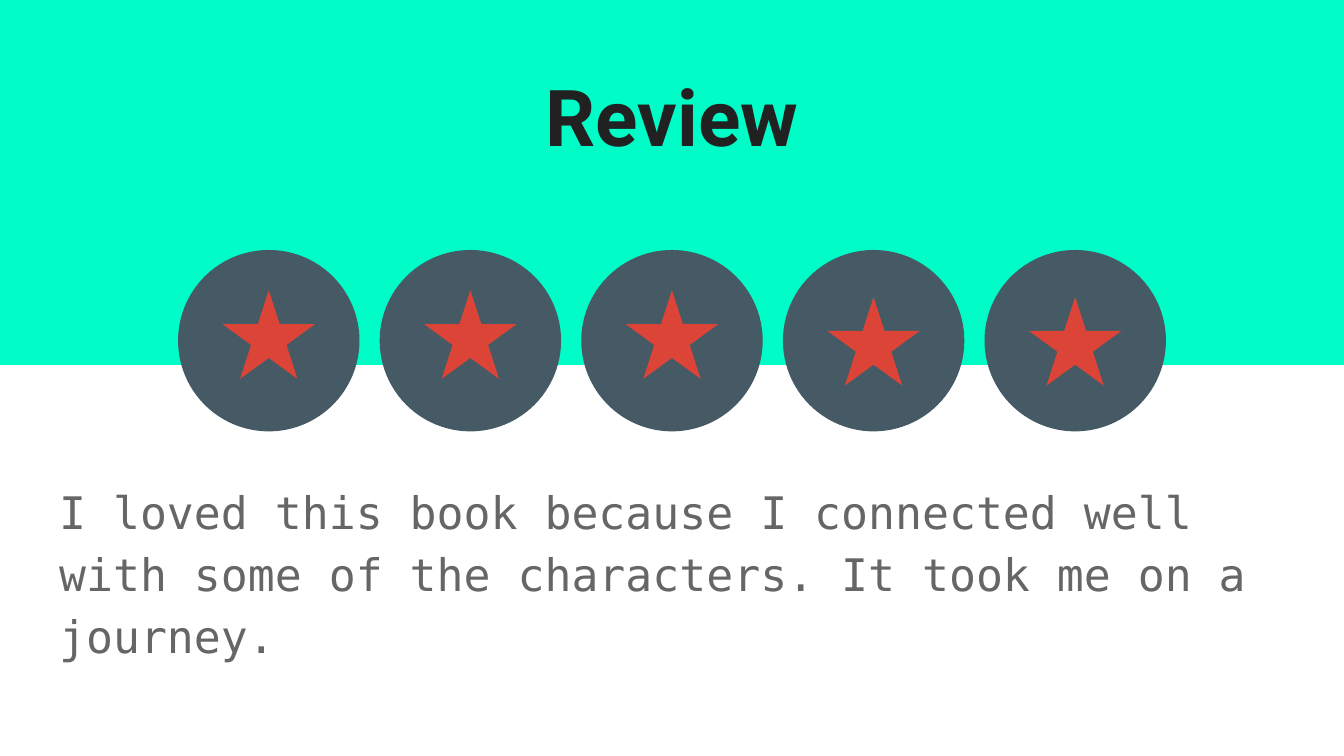
import pptx
import pptx.dml.color
import pptx.enum.shapes
import pptx.enum.text
import pptx.util
from lxml import etree

# Content
TITLE = "Review"
REVIEW = ("I loved this book because I connected well with some of the characters. "
          "It took me on a journey.")
STAR_TOPS = [155.5, 155.5, 155.5, 159.1, 159.1]  # one per rating badge

THEME = {
    "band": "00FDC8", "badge": "455A64", "star": "DB4437",
    "title": {"font": "Roboto", "size": 42, "color": "212121", "bold": True},
    "body": {"font": "DejaVu Sans Mono", "size": 24, "color": "666666", "bold": False},
}

# Layout in points
SLIDE_W, SLIDE_H = 720, 405
BAND_W, BAND_H = 721.4, 195.6
TEXT_LEFT, TEXT_W, TEXT_INSET = 24.5, 671, 7.2
BADGE_SIZE, BADGE_TOP, BADGE_STEP = 97.2, 133.9, 108
STAR_W, STAR_H = 49.7, 47.5

Pt = pptx.util.Pt
SHAPE = pptx.enum.shapes.MSO_SHAPE
ALIGN = pptx.enum.text.PP_ALIGN


def rgb(value):
    return pptx.dml.color.RGBColor.from_string(value)


def add_filled(shapes, preset, left, top, width, height, color):
    shape = shapes.add_shape(preset, Pt(left), Pt(top), Pt(width), Pt(height))
    shape.shadow.inherit = False
    shape.fill.solid()
    shape.fill.fore_color.rgb = rgb(color)
    shape.line.fill.background()
    return shape


def fill_placeholder(holder, top, height, text, style, align):
    holder.left, holder.top = Pt(TEXT_LEFT), Pt(top)
    holder.width, holder.height = Pt(TEXT_W), Pt(height)
    frame = holder.text_frame
    frame.word_wrap = True
    frame.auto_size = pptx.enum.text.MSO_AUTO_SIZE.NONE
    frame.vertical_anchor = pptx.enum.text.MSO_ANCHOR.TOP
    frame.margin_left = frame.margin_right = Pt(TEXT_INSET)
    frame.margin_top = frame.margin_bottom = Pt(TEXT_INSET)
    paragraph = frame.paragraphs[0]
    paragraph.alignment = align
    run = paragraph.add_run()
    run.text = text
    run.font.name, run.font.size = style["font"], Pt(style["size"])
    run.font.bold = style["bold"]
    run.font.color.rgb = rgb(style["color"])
    return paragraph


deck = pptx.Presentation()
deck.slide_width, deck.slide_height = Pt(SLIDE_W), Pt(SLIDE_H)
slide = deck.slides.add_slide(deck.slide_layouts[1])

# Colour band, sent behind the placeholders
band = add_filled(slide.shapes, SHAPE.RECTANGLE, 0, 0, BAND_W, BAND_H, THEME["band"])
band.element.getparent().insert(2, band.element)

# Title
fill_placeholder(slide.shapes.title, 29.5, 57.6, TITLE, THEME["title"], ALIGN.CENTER)

# Review text, without a bullet
review = fill_placeholder(slide.placeholders[1], 248.4, 126.7, REVIEW,
                          THEME["body"], ALIGN.LEFT)
review.line_spacing = 1.15
review.space_before, review.space_after = Pt(0), Pt(16)
properties = review._p.get_or_add_pPr()
properties.set("marL", "0")
properties.set("indent", "0")
etree.SubElement(properties, pptx.oxml.ns.qn("a:buNone"))

# Rating badges, centred across the slide
row_width = BADGE_STEP * (len(STAR_TOPS) - 1) + BADGE_SIZE
row_left = (SLIDE_W - row_width) / 2
for index, star_top in enumerate(STAR_TOPS):
    badge_left = row_left + index * BADGE_STEP
    star_left = badge_left + (BADGE_SIZE - STAR_W) / 2
    rating = slide.shapes.add_group_shape().shapes
    add_filled(rating, SHAPE.OVAL, badge_left, BADGE_TOP, BADGE_SIZE, BADGE_SIZE,
               THEME["badge"])
    add_filled(rating, SHAPE.STAR_5_POINT, star_left, star_top, STAR_W, STAR_H,
               THEME["star"])

deck.save("out.pptx")
